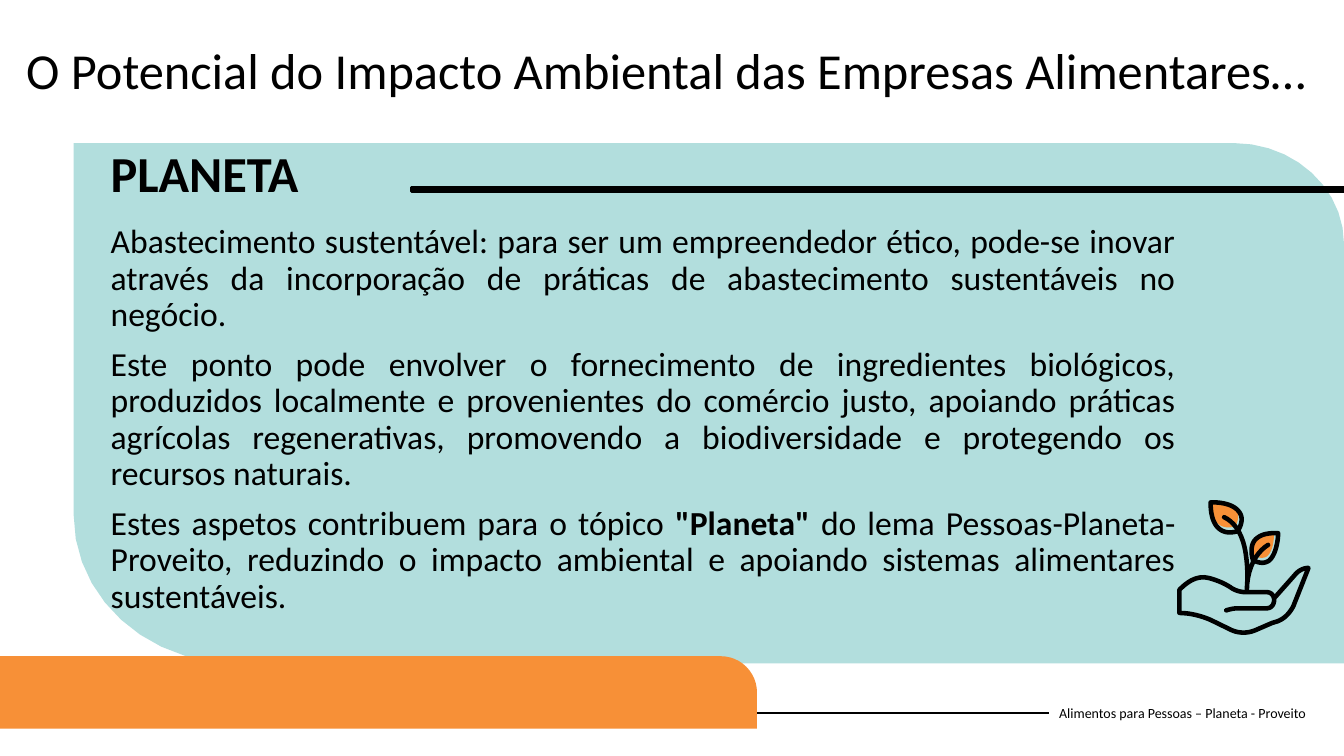
"""Builds the slide about the environmental impact of food companies."""
from lxml import etree
from pptx import Presentation
from pptx.dml.color import RGBColor
from pptx.enum.shapes import MSO_CONNECTOR, MSO_SHAPE
from pptx.enum.text import MSO_ANCHOR, MSO_AUTO_SIZE, PP_ALIGN
from pptx.oxml.ns import qn
from pptx.util import Pt

BLACK = RGBColor(0x00, 0x00, 0x00)
TEAL = RGBColor(0xB2, 0xDE, 0xDD)
ORANGE = RGBColor(0xF7, 0x90, 0x37)
LEFT, JUSTIFY = PP_ALIGN.LEFT, PP_ALIGN.JUSTIFY
TOP, MIDDLE = MSO_ANCHOR.TOP, MSO_ANCHOR.MIDDLE
FIXED = MSO_AUTO_SIZE.NONE
STRAIGHT = MSO_CONNECTOR.STRAIGHT
BAR, TAB = MSO_SHAPE.RECTANGLE, MSO_SHAPE.ROUND_1_RECTANGLE
STEPS = 10
INK = 3.25

TITLE = "O Potencial do Impacto Ambiental das Empresas Alimentares…"
BODY = [
    "Abastecimento sustentável: para ser um empreendedor ético, pode-se inovar "
    "através da incorporação de práticas de abastecimento sustentáveis no negócio.",
    "Este ponto pode envolver o fornecimento de ingredientes biológicos, "
    "produzidos localmente e provenientes do comércio justo, apoiando práticas "
    "agrícolas regenerativas, promovendo a biodiversidade e protegendo os "
    "recursos naturais.",
    'Estes aspetos contribuem para o tópico *"Planeta"* do lema '
    "Pessoas-Planeta-Proveito, reduzindo o impacto ambiental e apoiando "
    "sistemas alimentares sustentáveis.",
]

PANEL = [(52.6, 102.2), (881.3, 102.2), (924.5, 102.2, 960, 134.6, 960, 174.2),
         (960, 473.8), (168.5, 473.8), (104.4, 473.8, 52.6, 426.2, 52.6, 367.9)]
LEAVES = [
    [(895.7, 396.7), (899.3, 398.9, 902.9, 398.9, 905, 397.4),
     (909.4, 393.8, 910.1, 385.2, 910.1, 380.2),
     (903.6, 380.2, 898.6, 381.6, 896.4, 385.2),
     (893.5, 389.5, 895, 394.6, 895.7, 396.7)],
    [(865.4, 358.6), (865.4, 366.5, 866.9, 371.5, 870.5, 374.4),
     (874.8, 378, 880.6, 376.6, 882.7, 375.8),
     (884.9, 370.8, 884.9, 367.2, 883.4, 364.3),
     (879.8, 359.3, 870.5, 358.6, 865.4, 358.6)],
]
HAND = [(910.4, 427), (924.8, 410.8), (927.4, 407.5, 931, 405.7, 934.6, 405.7),
        (923.8, 433.1), (920.9, 438.5, 916.6, 442.8, 911.2, 444.2),
        (908.6, 445), (897.1, 450), (891.4, 452.5, 884.9, 452.5, 879.5, 450),
        (864.7, 442.8), (859, 440.3, 853.2, 438.8, 847.4, 438.1),
        (842.4, 437.8), (842.4, 421.2), (843.1, 421.2, 851.8, 409.7, 863.6, 412.9),
        (870.5, 414.7, 876.2, 417.6, 879.8, 420.1),
        (882.7, 421.9, 886.3, 423, 889.9, 423), (905, 423),
        (907.9, 423, 910.1, 425.5, 910.1, 428.4),
        (910.1, 432, 907.9, 434.5, 905, 434.5), (884.2, 434.5),
        (881.3, 434.5, 878.4, 435.2, 875.9, 436)]
RIMS = [
    [(895, 400), (899.3, 402.6, 903.6, 402.8, 906.8, 400.3),
     (911.2, 396.4, 913, 386.6, 913, 380.9),
     (904.3, 380.5, 899.3, 382.3, 896, 386.3),
     (892.8, 391, 894.2, 397.4, 895, 400)],
    [(864.7, 358.9), (864.7, 368.3, 866.9, 374.8, 871.2, 378),
     (875.9, 381.6, 881.6, 380.2, 884.2, 379.4),
     (887.4, 373.7, 887.8, 369.4, 885.2, 365.8),
     (881, 359.6, 870.5, 358.6, 864.7, 358.9)],
]
STEM = [(874.4, 369.4), (882.7, 373.3, 888.8, 383, 890.4, 399.6),
        (891.4, 408, 891, 416, 890.6, 422.6),
        (890.6, 405, 898, 394, 905.8, 389.2)]


def trace(route):
    """Turn corners and cubic curves into a list of points."""
    dots = [route[0]]
    for step in route[1:]:
        if len(step) == 2:
            dots.append(step)
            continue
        knots = [dots[-1], step[:2], step[2:4], step[4:]]
        for i in range(1, STEPS + 1):
            t = i / STEPS
            parts = ((1 - t) ** 3, 3 * t * (1 - t) ** 2, 3 * t * t * (1 - t), t ** 3)
            dots.append(tuple(sum(w * k[a] for w, k in zip(parts, knots))
                              for a in (0, 1)))
    return [(Pt(x), Pt(y)) for x, y in dots]


def write(frame, paras, size, bold=False, align=LEFT, anchor=TOP, lead=1.0, gap=0):
    """Fill a text frame; asterisks enclose bold words."""
    frame.word_wrap = True
    frame.auto_size = FIXED
    frame.vertical_anchor = anchor
    frame.margin_left = frame.margin_right = Pt(7.2)
    frame.margin_top = frame.margin_bottom = Pt(3.6)
    for i, words in enumerate(paras):
        para = frame.add_paragraph() if i else frame.paragraphs[0]
        para.alignment, para.line_spacing = align, lead
        para.space_before = Pt(gap)
        for j, part in enumerate(words.split("*")):
            run = para.add_run()
            run.text = part
            run.font.name, run.font.size = "Calibri", Pt(size)
            run.font.bold = bold or j % 2 == 1
            run.font.color.rgb = BLACK


class Deck:
    """Holds the style and the current slide."""

    def __init__(self):
        """Start a wide deck with one title-only slide."""
        self.deck = Presentation()
        self.deck.slide_width, self.deck.slide_height = Pt(960), Pt(540)
        self.slide = self.deck.slides.add_slide(self.deck.slide_layouts[5])
        self.shapes = self.slide.shapes

    def title(self, box, words, **form):
        """Place and fill the title."""
        head = self.shapes.title
        head.left, head.top, head.width, head.height = map(Pt, box)
        write(head.text_frame, [words], **form)

    def text(self, box, paras, **form):
        """Add a text box."""
        area = self.shapes.add_textbox(*map(Pt, box))
        write(area.text_frame, paras, **form)
        return area

    def paint(self, shape, fill=None, width=0):
        """Set fill and black outline."""
        shape.shadow.inherit = False
        if fill is None:
            shape.fill.background()
        else:
            shape.fill.solid()
            shape.fill.fore_color.rgb = fill
        if width:
            shape.line.color.rgb = BLACK
            shape.line.width = Pt(width)
        else:
            shape.line.fill.background()

    def block(self, kind, box, **look):
        """Add a preset shape."""
        shape = self.shapes.add_shape(kind, *map(Pt, box))
        self.paint(shape, **look)
        return shape

    def curve(self, route, closed=True, **look):
        """Add an outline made of lines and curves."""
        dots = trace(route)
        pen = self.shapes.build_freeform(*dots[0], scale=1.0)
        pen.add_line_segments(dots[1:], close=closed)
        shape = pen.convert_to_shape()
        self.paint(shape, **look)
        if look.get("width"):
            edge = shape.line.fill._xPr
            edge.set("cap", "rnd")
            etree.SubElement(edge, qn("a:round"))

    def rule(self, start, end, goal, width):
        """Add a line that ends at the left side of a box."""
        line = self.shapes.add_connector(STRAIGHT, *map(Pt, start + end))
        line.end_connect(goal, 1)
        line.line.color.rgb = BLACK
        line.line.width = Pt(width)
        etree.SubElement(line._element.spPr, qn("a:effectLst"))


def main():
    """Build and save the slide."""
    deck = Deck()
    deck.title((11.5, 29.5, 936.7, 63.4), TITLE, size=36, lead=0.9, gap=10)
    foot = deck.text((749.5, 494.6, 196.6, 28.8),
                     ["Alimentos para Pessoas – Planeta - Proveito"],
                     size=10, anchor=MIDDLE)
    deck.rule((0, 509), (749.5, 509), foot, 1.5)
    deck.curve(PANEL, fill=TEAL)
    tab = deck.block(TAB, (0, 468.7, 540.7, 51.8), fill=ORANGE)
    tab.adjustments[0] = 0.5
    deck.block(BAR, (293.8, 133.9, 666.2, 2.9), fill=BLACK, width=1.93)
    deck.text((72, 157, 774.7, 270.7), BODY, size=24, align=JUSTIFY, lead=0.9, gap=10)
    deck.text((72, 97.9, 192.2, 51.1), ["PLANETA"], size=36, bold=True)
    for leaf in LEAVES:
        deck.curve(leaf, fill=ORANGE)
    deck.curve(HAND, closed=False, width=INK)
    for rim in RIMS:
        deck.curve(rim, width=INK)
    deck.curve(STEM, closed=False, width=INK)
    deck.deck.save("out.pptx")


if __name__ == "__main__":
    main()
